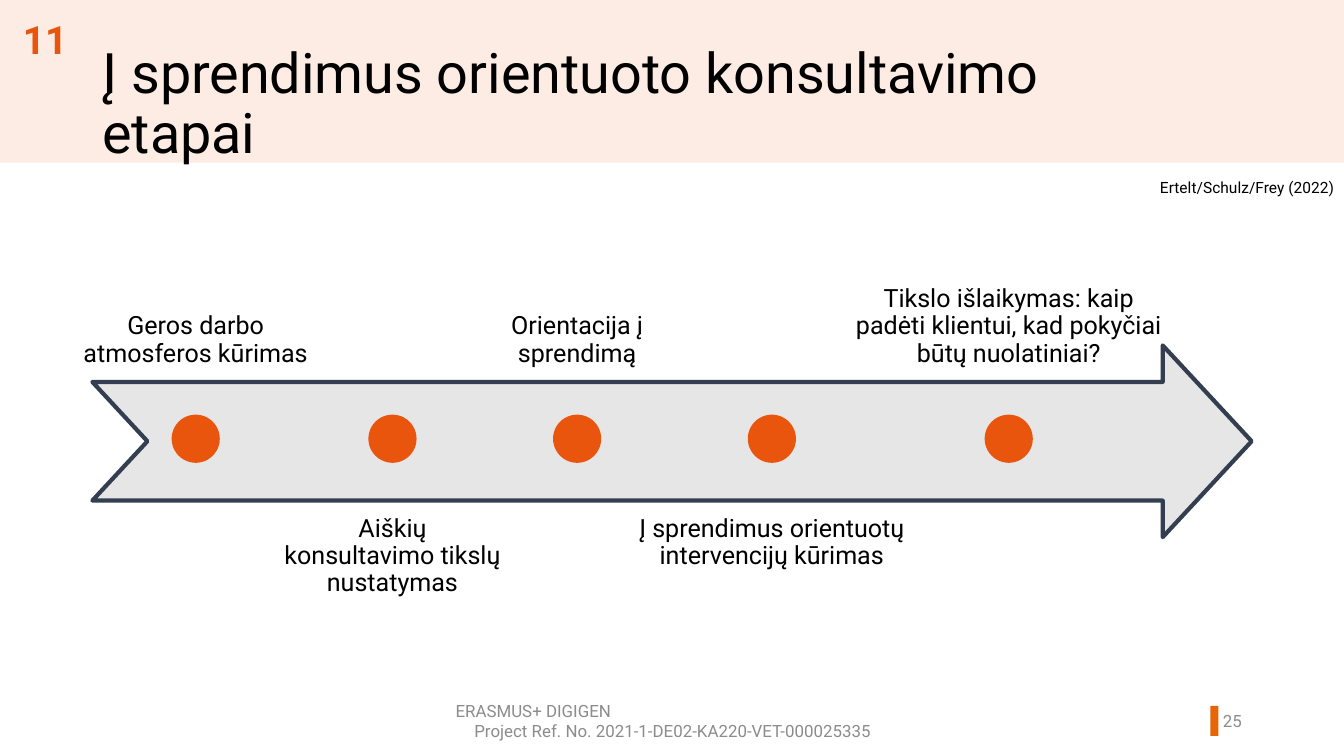
from pptx import Presentation
from pptx.dml.color import RGBColor
from pptx.enum.shapes import MSO_SHAPE
from pptx.enum.text import MSO_ANCHOR, MSO_AUTO_SIZE, PP_ALIGN
from pptx.util import Inches, Pt

FONT = "Roboto"
ORANGE, BLACK, GREY = "E9550D", "000000", "8C8C8C"
SLIDE_WIDTH, SLIDE_HEIGHT = 13.39, 7.53

# Stage text, centre of its dot, width of its label; labels alternate above and below
STAGES = [
    ("Geros darbo atmosferos kūrimas", 1.95, 2.6),
    ("Aiškių konsultavimo tikslų nustatymas", 3.91, 2.42),
    ("Orientacija į sprendimą", 5.75, 2.25),
    ("Į sprendimus orientuotų intervencijų kūrimas", 7.69, 2.99),
    ("Tikslo išlaikymas: kaip padėti klientui, kad pokyčiai būtų nuolatiniai?", 10.05, 3.42),
]


def color(value):
    return RGBColor.from_string(value)


def format_text(text_frame, size, font_color, align, bold=False, line_spacing=None):
    for paragraph in text_frame.paragraphs:
        paragraph.alignment = align
        if line_spacing:
            paragraph.line_spacing = line_spacing
        for run in paragraph.runs:
            run.font.name = FONT
            run.font.size = Pt(size)
            run.font.bold = bold
            run.font.color.rgb = color(font_color)


def add_shape(slide, kind, box, fill, line=None):
    shape = slide.shapes.add_shape(kind, *map(Inches, box))
    shape.shadow.inherit = False
    shape.fill.solid()
    shape.fill.fore_color.rgb = color(fill)
    if line:
        shape.line.color.rgb = color(line)
        shape.line.width = Pt(3)
    else:
        shape.line.fill.background()
    return shape


def add_text(slide, box, text, size, font_color, align, anchor=MSO_ANCHOR.TOP, **style):
    text_frame = slide.shapes.add_textbox(*map(Inches, box)).text_frame
    text_frame.word_wrap = True
    text_frame.vertical_anchor = anchor
    text_frame.text = text
    format_text(text_frame, size, font_color, align, **style)
    return text_frame


def add_header(slide, left, top, width, height):
    add_shape(slide, MSO_SHAPE.RECTANGLE, (left, top, width, height), "FDECE3")

    # Title
    title = slide.shapes.title
    title.left, title.top = Inches(left + 0.92), Inches(top + 0.4)
    title.width, title.height = Inches(10.59), Inches(0.9)
    title.text_frame.text = "Į sprendimus orientuoto konsultavimo etapai"
    title.text_frame.word_wrap = True
    title.text_frame.auto_size = MSO_AUTO_SIZE.NONE
    title.text_frame.vertical_anchor = MSO_ANCHOR.TOP
    format_text(title.text_frame, 40, BLACK, PP_ALIGN.LEFT, line_spacing=0.9)

    # Chapter number and source
    add_text(slide, (left, top + 0.11, 0.9, 0.57), "11", 28, ORANGE,
             PP_ALIGN.CENTER, bold=True)
    add_text(slide, (left + width - 3.12, top + height + 0.1, 3.12, 0.29),
             "Ertelt/Schulz/Frey (2022)", 11.1, BLACK, PP_ALIGN.RIGHT)


def add_stages(slide, left, top, width, height):
    arrow = add_shape(slide, MSO_SHAPE.NOTCHED_RIGHT_ARROW, (left, top, width, height),
                      "E7E6E6", "333F50")
    arrow.adjustments[0], arrow.adjustments[1] = 0.619, 0.464

    dot, label_height, inset = 0.48, 0.99, Inches(0.11)
    for index, (text, center, label_width) in enumerate(STAGES):
        # Dot on the arrow
        add_shape(slide, MSO_SHAPE.OVAL, (center - dot / 2, top + 0.69, dot, dot), ORANGE)

        # Label
        above = index % 2 == 0
        label_top = top + 0.33 - label_height if above else top + height - 0.32
        anchor = MSO_ANCHOR.BOTTOM if above else MSO_ANCHOR.TOP
        label = add_text(slide, (center - label_width / 2, label_top, label_width, label_height),
                         text, 18, BLACK, PP_ALIGN.CENTER, anchor, line_spacing=0.9)
        label.margin_left = label.margin_right = inset
        label.margin_top = label.margin_bottom = inset


def add_footer(slide, left, top, width, height):
    # Project reference
    project = add_text(slide, (left, top, 4.52, height),
                       "ERASMUS+ DIGIGEN\nProject Ref. No. 2021-1-DE02-KA220-VET-000025335",
                       12.1, GREY, PP_ALIGN.CENTER, MSO_ANCHOR.MIDDLE)
    project.paragraphs[0].alignment = PP_ALIGN.LEFT

    # Slide number with its marker
    right = left + width
    add_shape(slide, MSO_SHAPE.RECTANGLE, (right - 0.41, top + 0.05, 0.08, 0.3), "E86507")
    add_text(slide, (right - 0.65, top, 0.65, height), "25", 12.1, GREY,
             PP_ALIGN.RIGHT, MSO_ANCHOR.MIDDLE)


def main():
    presentation = Presentation()
    presentation.slide_width = Inches(SLIDE_WIDTH)
    presentation.slide_height = Inches(SLIDE_HEIGHT)
    slide = presentation.slides.add_slide(presentation.slide_layouts[5])

    add_header(slide, 0, 0, SLIDE_WIDTH, 1.62)
    add_stages(slide, 0.92, 3.44, 11.55, 1.91)
    add_footer(slide, 4.44, 6.98, 8.03, 0.4)

    # Bring the title in front of the header band
    slide.shapes.title.element.getparent().append(slide.shapes.title.element)
    presentation.save("out.pptx")


if __name__ == "__main__":
    main()
